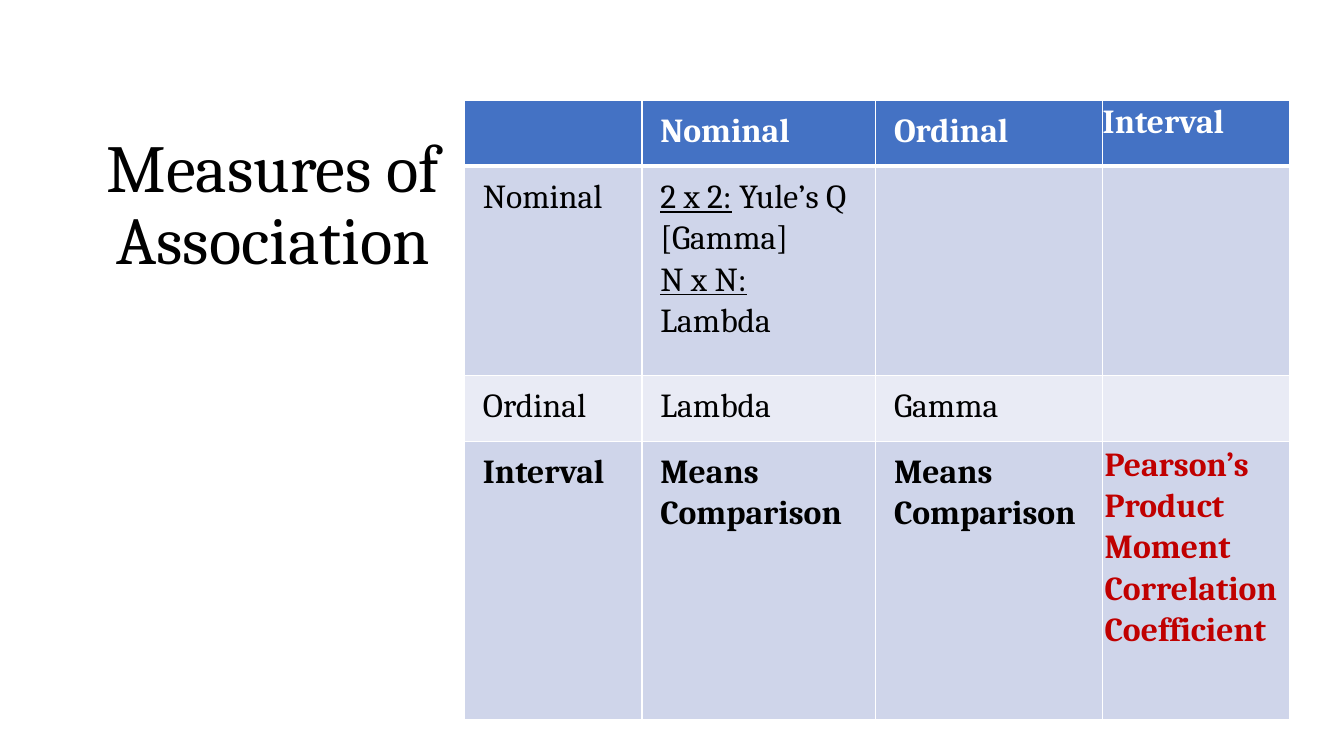
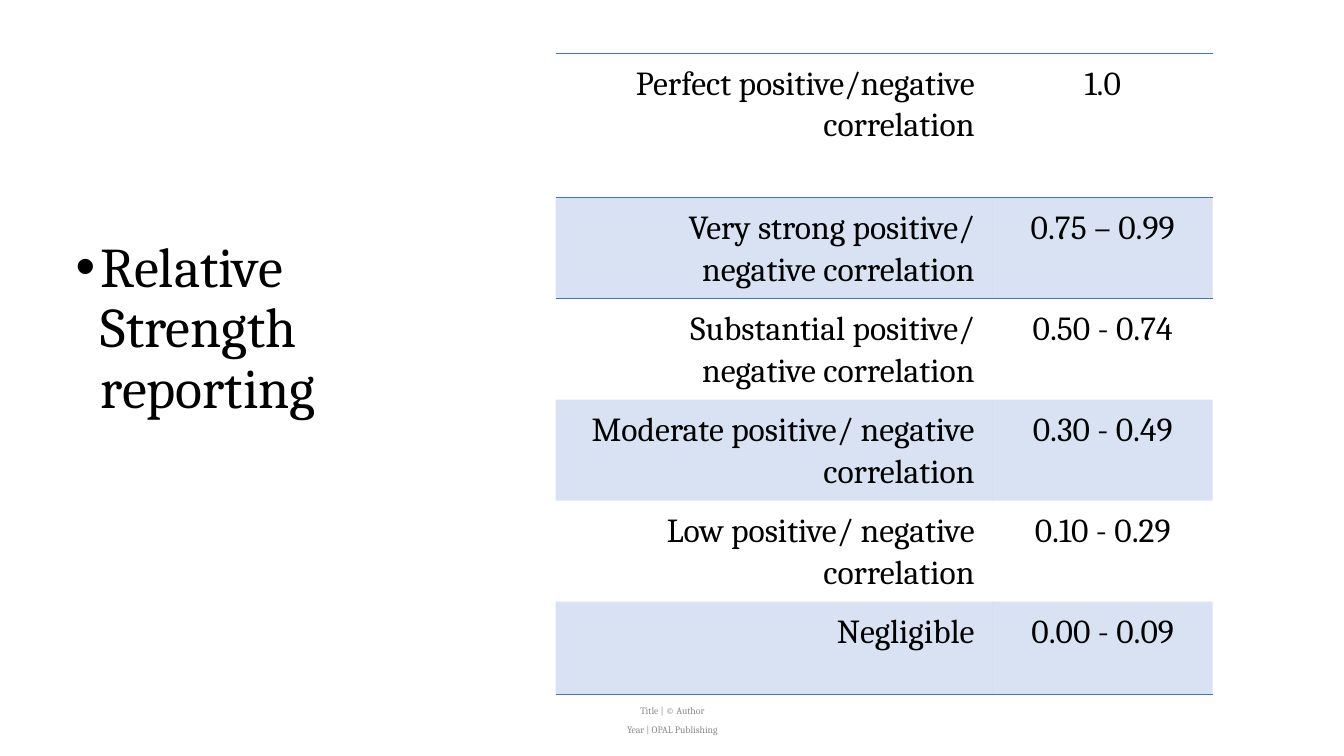
from dataclasses import dataclass

from lxml import etree
from pptx import Presentation
from pptx.dml.color import RGBColor
from pptx.enum.text import MSO_ANCHOR, MSO_AUTO_SIZE, PP_ALIGN
from pptx.oxml.ns import qn
from pptx.util import Cm, Pt

LEFT, CENTER, RIGHT = PP_ALIGN.LEFT, PP_ALIGN.CENTER, PP_ALIGN.RIGHT
TOP, MIDDLE = MSO_ANCHOR.TOP, MSO_ANCHOR.MIDDLE
NO_AUTOFIT = MSO_AUTO_SIZE.NONE
TITLE_AND_CONTENT, TITLE_ONLY = 1, 5
PLAIN_TABLE_STYLE = "{2D5ABB26-0587-4C30-8999-92F81FD0307C}"


@dataclass(frozen=True)
class Theme:
    font: str = "Cambria"
    text: str = "000000"
    white: str = "FFFFFF"
    accent: str = "4472C4"
    band_dark: str = "CFD5EA"
    band_light: str = "E9EBF5"
    highlight: str = "C00000"
    footer_text: str = "8C8C8C"
    band_opacity: int = 20
    title_size: int = 48
    body_size: int = 40
    table_size: int = 24
    footer_size: int = 7
    tight_spacing: float = 0.9
    table_spacing: float = 1.07


THEME = Theme()


@dataclass
class Cell:
    """Paragraphs are strings or lists of (text, underlined) runs."""
    paragraphs: tuple = ()
    bold: bool = False
    color: str = THEME.text
    fill: str = ""
    opacity: int = 100
    align: PP_ALIGN = LEFT
    insets: tuple = (0.46, 0.23, 0.46, 0.23)


def set_attributes(target, values):
    for name, value in values.items():
        setattr(target, name, value)


def set_insets(target, insets):
    sides = ("left", "top", "right", "bottom")
    set_attributes(target, {f"margin_{side}": Cm(inset)
                            for side, inset in zip(sides, insets)})


def add_border(properties, side, color, width):
    line = etree.SubElement(properties, qn(f"a:ln{side}"), w=str(Pt(width)))
    fill = etree.SubElement(line, qn("a:solidFill"))
    etree.SubElement(fill, qn("a:srgbClr"), val=color)


class Deck:
    def __init__(self, theme):
        self.theme = theme
        self.presentation = Presentation()
        self.presentation.slide_width = Cm(33.87)
        self.presentation.slide_height = Cm(19.05)
        self.slide = None

    def add_slide(self, layout):
        layouts = self.presentation.slide_layouts
        self.slide = self.presentation.slides.add_slide(layouts[layout])

    def add_text(self, text_frame, paragraphs, size, color, bold=False,
                 **layout):
        """Fill a text frame; layout holds paragraph format values."""
        font_values = {"name": self.theme.font, "size": Pt(size), "bold": bold}
        for index, content in enumerate(paragraphs):
            paragraph = (text_frame.add_paragraph() if index
                         else text_frame.paragraphs[0])
            set_attributes(paragraph, layout)
            runs = [(content, False)] if isinstance(content, str) else content
            for text, underlined in runs:
                run = paragraph.add_run()
                run.text = text
                set_attributes(run.font, font_values | {"underline": underlined})
                run.font.color.rgb = RGBColor.from_string(color)

    def place(self, shape, box, anchor):
        names = ("left", "top", "width", "height")
        set_attributes(shape, dict(zip(names, map(Cm, box))))
        set_attributes(shape.text_frame, {
            "word_wrap": True, "auto_size": NO_AUTOFIT,
            "vertical_anchor": anchor})

    def title(self, text, box, top_inset):
        shape = self.slide.shapes.title
        self.place(shape, box, TOP)
        shape.text_frame.margin_top = Cm(top_inset)
        self.add_text(shape.text_frame, [text], self.theme.title_size,
                      self.theme.text, alignment=CENTER,
                      line_spacing=self.theme.tight_spacing)

    def bullet(self, text, box):
        """Use the content placeholder, which supplies the bullet sign."""
        title = self.slide.shapes.title.element
        title.getparent().remove(title)
        shape = self.slide.placeholders[1]
        self.place(shape, box, TOP)
        self.add_text(shape.text_frame, [text], self.theme.body_size,
                      self.theme.text, space_before=Pt(10),
                      line_spacing=self.theme.tight_spacing)
        indent = Cm(0.64)
        for properties in shape.element.iter(qn("a:pPr")):
            properties.set("marL", str(indent))
            properties.set("indent", str(-indent))

    def footer(self, lines, box):
        shape = self.slide.shapes.add_textbox(*map(Cm, box))
        self.place(shape, box, MIDDLE)
        self.add_text(shape.text_frame, lines, self.theme.footer_size,
                      self.theme.footer_text, alignment=CENTER,
                      space_after=Pt(6),
                      line_spacing=self.theme.tight_spacing)

    def table(self, position, widths, heights, rows, borders):
        """borders(row) gives {side: (color, width)} for the cells of a row."""
        size = (sum(widths), sum(heights))
        frame = self.slide.shapes.add_table(
            len(rows), len(widths), *map(Cm, (*position, *size)))
        table = frame.table
        set_attributes(table, {"first_row": False, "horz_banding": False})
        next(frame.element.iter(qn("a:tableStyleId"))).text = PLAIN_TABLE_STYLE
        for column, width in zip(table.columns, widths):
            column.width = Cm(width)
        for row, height in zip(table.rows, heights):
            row.height = Cm(height)
        elements = frame.element.iter(qn("a:tc"))
        for row_index, row in enumerate(rows):
            for column_index, content in enumerate(row):
                properties = next(elements).get_or_add_tcPr()
                for side, (color, width) in borders(row_index).items():
                    add_border(properties, side, color, width)
                self.fill_cell(table.cell(row_index, column_index),
                               properties, content)

    def fill_cell(self, cell, properties, content):
        set_insets(cell, content.insets)
        if content.fill:
            cell.fill.solid()
            cell.fill.fore_color.rgb = RGBColor.from_string(content.fill)
            if content.opacity < 100:
                color = properties.find(f"{qn('a:solidFill')}/{qn('a:srgbClr')}")
                etree.SubElement(color, qn("a:alpha"),
                                 val=str(content.opacity * 1000))
        self.add_text(cell.text_frame, content.paragraphs,
                      self.theme.table_size, content.color, content.bold,
                      alignment=content.align,
                      line_spacing=self.theme.table_spacing)


def build_measures(deck):
    theme = deck.theme
    deck.add_slide(TITLE_ONLY)
    deck.title("Measures of Association", (2.06, 2.06, 9.65, 13.79), 1.32)

    def header(*paragraphs, **values):
        return Cell(paragraphs, bold=True, color=theme.white,
                    fill=theme.accent, **values)

    def dark(*paragraphs, **values):
        return Cell(paragraphs, fill=theme.band_dark, **values)

    def light(*paragraphs):
        return Cell(paragraphs, fill=theme.band_light)

    rows = [
        [header(), header("Nominal"), header("Ordinal"),
         header("Interval", insets=(0, 0, 0, 0))],
        [dark("Nominal"),
         dark([("2 x 2:", True), (" Yule’s Q [Gamma]", False)],
              [("N x N:", True), (" Lambda", False)]),
         dark(), dark()],
        [light("Ordinal"), light("Lambda"), light("Gamma"), light()],
        [dark("Interval", bold=True),
         dark("Means Comparison", bold=True),
         dark("Means Comparison", bold=True),
         dark("Pearson’s Product Moment Correlation Coefficient", bold=True,
              color=theme.highlight, insets=(0.05, 0.05, 0.05, 0))],
    ]

    def white_grid(row):
        """Thin lines, with a heavy one below the header."""
        widths = {"L": 1, "R": 1, "T": 3 if row == 1 else 1,
                  "B": 3 if row == 0 else 1}
        return {side: (theme.white, width) for side, width in widths.items()}

    deck.table((11.71, 2.54), (4.47, 5.89, 5.72, 4.72),
               (1.65, 5.28, 1.65, 7.01), rows, white_grid)


def build_strength(deck):
    theme = deck.theme
    deck.add_slide(TITLE_AND_CONTENT)
    deck.bullet("Relative Strength reporting", (1.65, 5.89, 10.62, 10.49))
    deck.footer(["Title | © Author", "Year | OPAL Publishing"],
                (11.23, 17.65, 11.43, 1.02))
    strengths = [
        ("Perfect positive/negative correlation", "1.0"),
        ("Very strong positive/ negative correlation", "0.75 – 0.99"),
        ("Substantial positive/ negative correlation", "0.50 - 0.74"),
        ("Moderate positive/ negative correlation", "0.30 - 0.49"),
        ("Low positive/ negative correlation", "0.10 - 0.29"),
        ("Negligible", "0.00 - 0.09"),
    ]
    rows = [[Cell((text,), align=align, opacity=theme.band_opacity,
                  fill=theme.accent if index % 2 else "")
             for text, align in zip(strength, (RIGHT, CENTER))]
            for index, strength in enumerate(strengths)]
    ruled_sides = {0: "TB", 1: "T", len(rows) - 1: "B"}

    def rules(row):
        return {side: (theme.accent, 1) for side in ruled_sides.get(row, "")}

    deck.table((14, 1.35), (11.02, 5.54), (3.63, *[2.54] * 4, 2.34),
               rows, rules)


def main():
    deck = Deck(THEME)
    build_measures(deck)
    build_strength(deck)
    deck.presentation.save("out.pptx")


if __name__ == "__main__":
    main()
